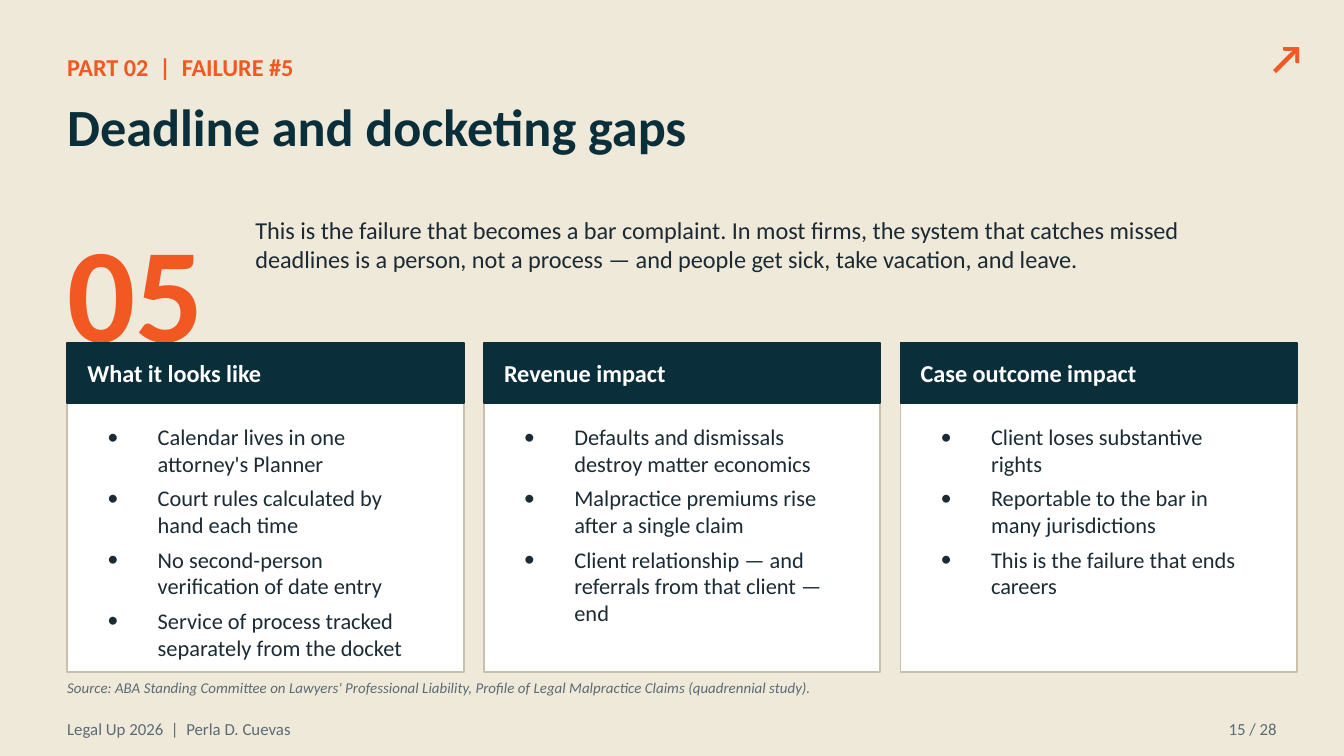
"""Build the slide on deadline and docketing gaps."""
from dataclasses import dataclass

from pptx import Presentation
from pptx.dml.color import RGBColor
from pptx.enum.shapes import MSO_SHAPE
from pptx.enum.text import MSO_ANCHOR, PP_ALIGN
from pptx.oxml.ns import qn
from pptx.util import Inches, Pt
from lxml import etree

RECTANGLE = MSO_SHAPE.RECTANGLE
TOP, MIDDLE = MSO_ANCHOR.TOP, MSO_ANCHOR.MIDDLE
LEFT, CENTER, RIGHT = PP_ALIGN.LEFT, PP_ALIGN.CENTER, PP_ALIGN.RIGHT

CREAM = RGBColor(0xEF, 0xE9, 0xDA)
ORANGE = RGBColor(0xF2, 0x58, 0x22)
NAVY = RGBColor(0x0A, 0x2F, 0x3A)
INK = RGBColor(0x1B, 0x2A, 0x33)
GREY = RGBColor(0x5C, 0x6B, 0x73)
SAND = RGBColor(0xC9, 0xC0, 0xAB)
WHITE = RGBColor(0xFF, 0xFF, 0xFF)

FONT = "Calibri"
UNIT = 0.05
MARGIN = 10
CARD_TOP, CARD_WIDTH, CARD_HEIGHT, CARD_GAP = 51, 59, 49, 3
HEADER_HEIGHT = 9
BULLET_INDENT = Pt(27)


@dataclass(frozen=True)
class Area:
    """A block of grid cells: column, row, width and height."""

    column: float
    row: float
    width: float
    height: float

    def lengths(self) -> list[int]:
        """Return left, top, width and height as slide lengths."""
        return [Inches(cells * UNIT) for cells in (self.column, self.row, self.width, self.height)]


@dataclass(frozen=True)
class Style:
    """The look of a text."""

    size: float
    color: RGBColor
    bold: bool = False
    italic: bool = False


@dataclass(frozen=True)
class Label:
    """A single-paragraph text with its place and look."""

    text: str
    area: Area
    style: Style
    anchor: MSO_ANCHOR = TOP
    align: PP_ALIGN = LEFT


@dataclass(frozen=True)
class Card:
    """A titled card with bullet points."""

    title: str
    points: tuple[str, ...]


HEADING = Style(13, WHITE, bold=True)
BULLET = Style(12, INK)
FOOTER = Style(9, GREY)

INTRODUCTION = (
    Label("↗", Area(186, 3, 11, 11), Style(22, ORANGE, bold=True), MIDDLE, CENTER),
    Label("PART 02  |  FAILURE #5", Area(MARGIN, 7, 120, 6), Style(13, ORANGE, bold=True), MIDDLE),
    Label("Deadline and docketing gaps", Area(MARGIN, 14, 180, 18), Style(28, NAVY, bold=True)),
    Label("05", Area(MARGIN, 31, 28, 18), Style(72, ORANGE, bold=True)),
    Label(
        "This is the failure that becomes a bar complaint. In most firms, the system that catches "
        "missed deadlines is a person, not a process — and people get sick, take vacation, and leave.",
        Area(38, 32, 152, 19),
        Style(13, INK),
    ),
)

CARDS = (
    Card("What it looks like", (
        "Calendar lives in one attorney's Planner",
        "Court rules calculated by hand each time",
        "No second-person verification of date entry",
        "Service of process tracked separately from the docket",
    )),
    Card("Revenue impact", (
        "Defaults and dismissals destroy matter economics",
        "Malpractice premiums rise after a single claim",
        "Client relationship — and referrals from that client — end",
    )),
    Card("Case outcome impact", (
        "Client loses substantive rights",
        "Reportable to the bar in many jurisdictions",
        "This is the failure that ends careers",
    )),
)

CLOSING = (
    Label(
        "Source: ABA Standing Committee on Lawyers' Professional Liability, "
        "Profile of Legal Malpractice Claims (quadrennial study).",
        Area(MARGIN, 101, 180, 4.4),
        Style(8, GREY, italic=True),
    ),
    Label("Legal Up 2026  |  Perla D. Cuevas", Area(MARGIN, 106, 120, 5), FOOTER, MIDDLE),
    Label("15 / 28", Area(172, 106, 18, 5), FOOTER, MIDDLE, RIGHT),
)


def add_frame(page, area: Area, anchor: MSO_ANCHOR = TOP, inset_x: float = 0, inset_y: float = 0):
    """Add a wrapping text box and return its text frame."""
    frame = page.shapes.add_textbox(*area.lengths()).text_frame
    frame.word_wrap = True
    frame.vertical_anchor = anchor
    frame.margin_left = frame.margin_right = Inches(inset_x * UNIT)
    frame.margin_top = frame.margin_bottom = Inches(inset_y * UNIT)
    return frame


def add_span(para, text: str, style: Style) -> None:
    """Add one styled run to a paragraph."""
    span = para.add_run()
    span.text = text
    span.font.name = FONT
    span.font.size = Pt(style.size)
    span.font.bold = style.bold
    span.font.italic = style.italic
    span.font.color.rgb = style.color


def add_label(page, label: Label) -> None:
    """Draw a single-paragraph text."""
    para = add_frame(page, label.area, label.anchor).paragraphs[0]
    para.alignment = label.align
    add_span(para, label.text, label.style)


def add_box(page, area: Area, fill: RGBColor, line: RGBColor) -> None:
    """Draw a filled rectangle with a thin outline."""
    box = page.shapes.add_shape(RECTANGLE, *area.lengths())
    box.shadow.inherit = False
    box.fill.solid()
    box.fill.fore_color.rgb = fill
    box.line.color.rgb = line
    box.line.width = Pt(1)


def set_bullet(para, color: RGBColor) -> None:
    """Give a paragraph a hanging bullet."""
    properties = para._p.get_or_add_pPr()
    properties.set("marL", str(BULLET_INDENT))
    properties.set("indent", str(-BULLET_INDENT))
    bullet_color = etree.SubElement(properties, qn("a:buClr"))
    etree.SubElement(bullet_color, qn("a:srgbClr"), val=str(color))
    etree.SubElement(properties, qn("a:buSzPct"), val="100000")
    etree.SubElement(properties, qn("a:buFont"), typeface=FONT)
    etree.SubElement(properties, qn("a:buChar"), char="•")


def add_card(page, card: Card, column: float) -> None:
    """Draw a card with its header and bullet points."""
    add_box(page, Area(column, CARD_TOP, CARD_WIDTH, CARD_HEIGHT), WHITE, SAND)
    add_box(page, Area(column, CARD_TOP, CARD_WIDTH, HEADER_HEIGHT), NAVY, NAVY)
    title_area = Area(column + 3, CARD_TOP, CARD_WIDTH - 6, HEADER_HEIGHT)
    add_label(page, Label(card.title, title_area, HEADING, MIDDLE))
    points_area = Area(column + 4, CARD_TOP + HEADER_HEIGHT + 2, CARD_WIDTH - 8, 36)
    frame = add_frame(page, points_area, inset_x=2, inset_y=1)
    for index, point in enumerate(card.points):
        para = frame.add_paragraph() if index else frame.paragraphs[0]
        para.space_before = Pt(4 if index else 0)
        set_bullet(para, INK)
        add_span(para, point, BULLET)


def main() -> None:
    """Build and save the deck."""
    deck = Presentation()
    deck.slide_width = Inches(10)
    deck.slide_height = deck.slide_width * 9 // 16
    page = deck.slides.add_slide(deck.slide_layouts[6])
    page.background.fill.solid()
    page.background.fill.fore_color.rgb = CREAM
    for label in INTRODUCTION:
        add_label(page, label)
    for index, card in enumerate(CARDS):
        add_card(page, card, MARGIN + index * (CARD_WIDTH + CARD_GAP))
    for label in CLOSING:
        add_label(page, label)
    deck.save("out.pptx")


if __name__ == "__main__":
    main()
